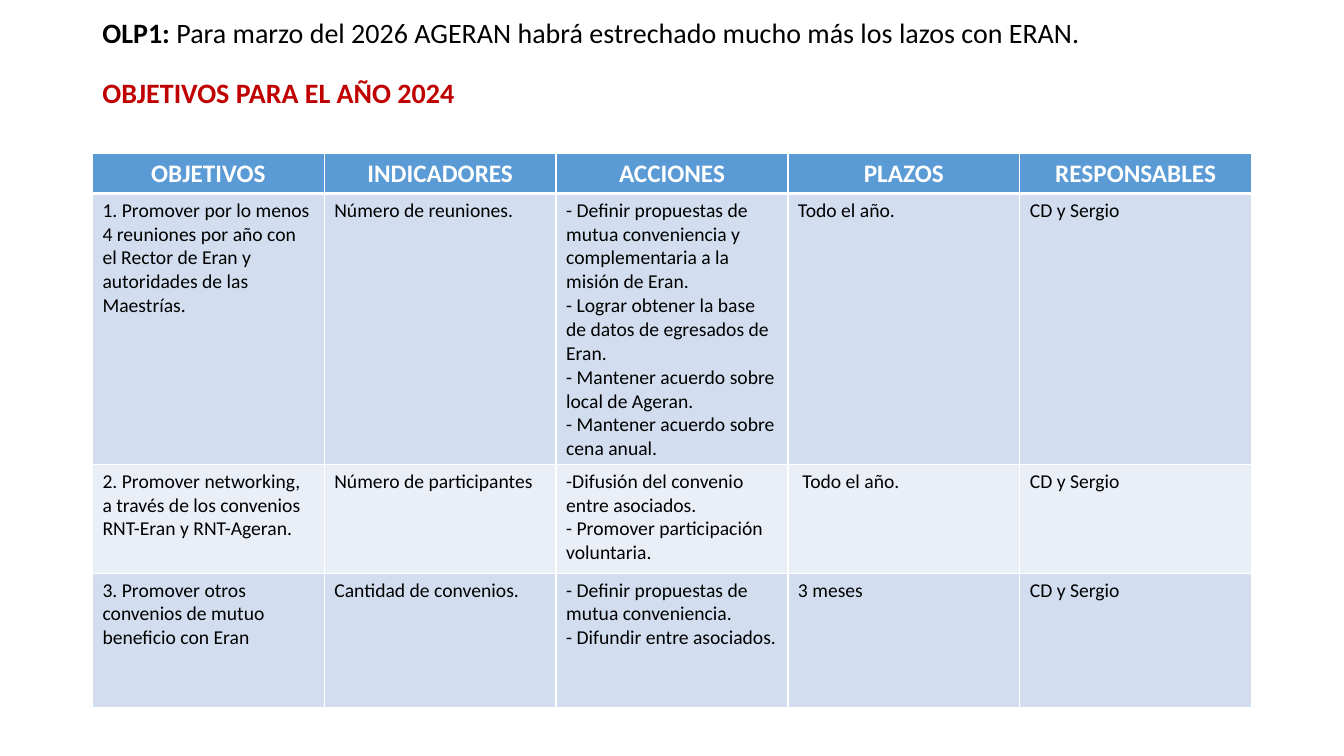
import pptx
import pptx.dml.color
import pptx.enum.text
import pptx.oxml
import pptx.oxml.ns
import pptx.util
from pptx.util import Cm


def color(hex_string):
    return pptx.dml.color.RGBColor.from_string(hex_string)


class ObjectivesSlide:
    """Holds the style and the current slide, and adds its elements."""

    font = "Calibri"
    black, white, red = "000000", "FFFFFF", "C00000"
    header_fill = "5B9BD5"
    band_fills = ("D2DEEF", "EAEFF7")

    def __init__(self, presentation):
        self.slide = presentation.slides.add_slide(presentation.slide_layouts[6])

    def add_run(self, paragraph, text, size, text_color, bold=False):
        run = paragraph.add_run()
        run.text = text
        run.font.name = self.font
        run.font.size = pptx.util.Pt(size)
        run.font.bold = bold
        run.font.color.rgb = color(text_color)

    def add_title(self, left, top, width, height, lines):
        frame = self.slide.shapes.add_textbox(left, top, width, height).text_frame
        frame.word_wrap = True
        frame.vertical_anchor = pptx.enum.text.MSO_ANCHOR.MIDDLE
        for index, runs in enumerate(lines):
            paragraph = frame.add_paragraph() if index else frame.paragraphs[0]
            paragraph.line_spacing = 0.9
            paragraph.space_before = pptx.util.Pt(21 if index else 0)
            for text, text_color, bold in runs:
                self.add_run(paragraph, text, 20, text_color, bold)

    def add_borders(self, cell, bottom_width):
        properties = cell._tc.get_or_add_tcPr()
        for side, width in (("L", 1), ("R", 1), ("T", 1), ("B", bottom_width)):
            properties.append(pptx.oxml.parse_xml(
                f'<a:ln{side} {pptx.oxml.ns.nsdecls("a")} w="{pptx.util.Pt(width)}">'
                f'<a:solidFill><a:srgbClr val="{self.white}"/></a:solidFill>'
                f'</a:ln{side}>'))

    def fill_cell(self, cell, text, row_index):
        is_header = row_index == 0
        self.add_borders(cell, 3 if is_header else 1)
        cell.fill.solid()
        cell.fill.fore_color.rgb = color(
            self.header_fill if is_header else self.band_fills[(row_index - 1) % 2])
        for index, line in enumerate(text.split("\n")):
            frame = cell.text_frame
            paragraph = frame.add_paragraph() if index else frame.paragraphs[0]
            if is_header:
                paragraph.alignment = pptx.enum.text.PP_ALIGN.CENTER
                self.add_run(paragraph, line, 18, self.white, True)
            else:
                self.add_run(paragraph, line, 14, self.black)

    def add_table(self, left, top, width, row_heights, rows):
        table = self.slide.shapes.add_table(
            len(rows), len(rows[0]), left, top, width, sum(row_heights)).table
        for row_index, (height, texts) in enumerate(zip(row_heights, rows)):
            table.rows[row_index].height = height
            for column_index, text in enumerate(texts):
                self.fill_cell(table.cell(row_index, column_index), text, row_index)


TITLE_LINES = [
    [("OLP1: ", ObjectivesSlide.black, True),
     ("Para marzo del 2026 AGERAN habrá estrechado mucho más los lazos con ERAN.",
      ObjectivesSlide.black, False)],
    [("OBJETIVOS PARA EL AÑO 2024", ObjectivesSlide.red, True)],
]

TABLE_ROWS = [
    ["OBJETIVOS", "INDICADORES", "ACCIONES", "PLAZOS", "RESPONSABLES"],
    ["1. Promover por lo menos 4 reuniones por año con el Rector de Eran y "
     "autoridades de las Maestrías.",
     "Número de reuniones.",
     "- Definir propuestas de mutua conveniencia y complementaria a la misión de Eran.\n"
     "- Lograr obtener la base de datos de egresados de Eran.\n"
     "- Mantener acuerdo sobre local de Ageran.\n"
     "- Mantener acuerdo sobre cena anual.",
     "Todo el año.", "CD y Sergio"],
    ["2. Promover networking, a través de los convenios RNT-Eran y RNT-Ageran.",
     "Número de participantes",
     "-Difusión del convenio entre asociados.\n- Promover participación voluntaria.",
     " Todo el año.", "CD y Sergio"],
    ["3. Promover otros convenios de mutuo beneficio con Eran",
     "Cantidad de convenios.",
     "- Definir propuestas de mutua conveniencia.\n- Difundir entre asociados.",
     "3 meses", "CD y Sergio"],
]


def main():
    presentation = pptx.Presentation()
    presentation.slide_width = Cm(33.87)
    presentation.slide_height = Cm(19.05)
    left, width = Cm(2.33), Cm(29.21)
    objectives = ObjectivesSlide(presentation)
    objectives.add_title(left, Cm(0.23), width, Cm(2.8), TITLE_LINES)
    row_heights = [Cm(height) for height in (0.97, 6.83, 2.74, 3.38)]
    objectives.add_table(left, Cm(3.86), width, row_heights, TABLE_ROWS)
    presentation.save("out.pptx")


if __name__ == "__main__":
    main()
